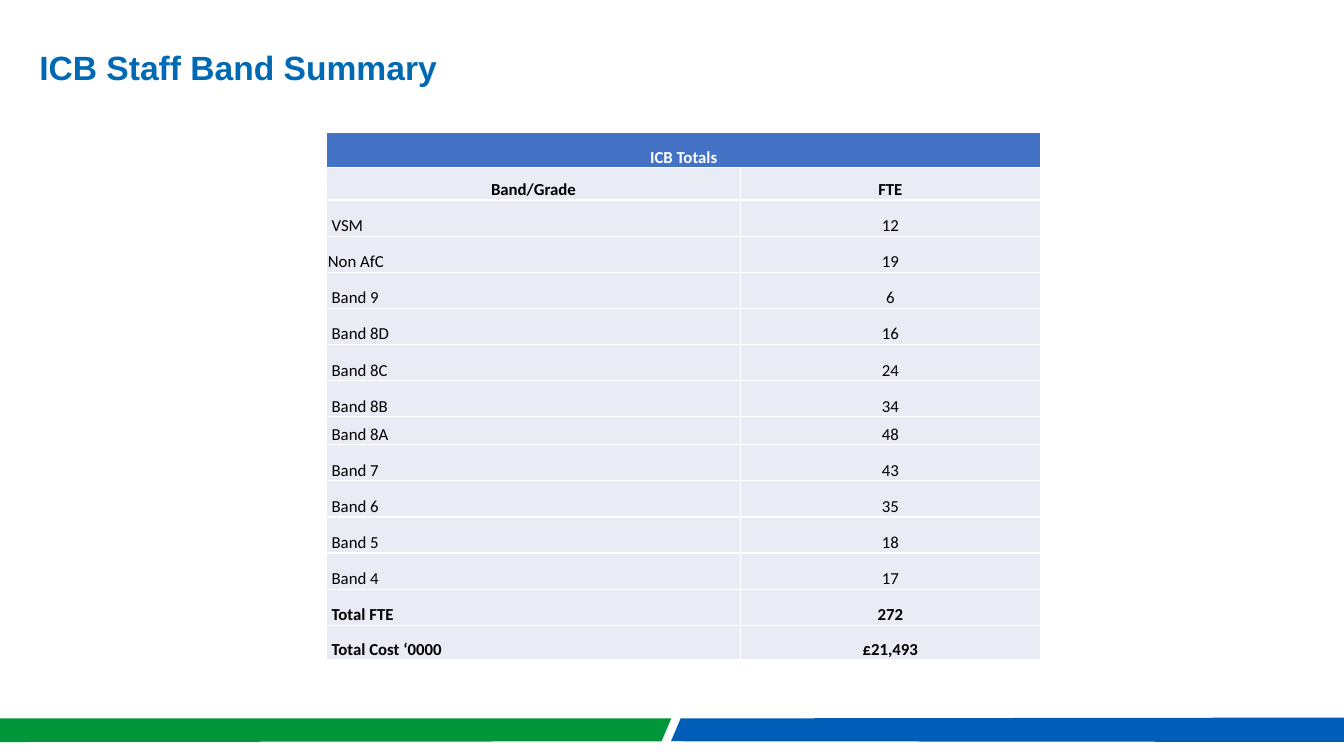
import pptx
import pptx.dml.color
import pptx.enum.text
import pptx.oxml
import pptx.oxml.ns
import pptx.util
from pptx.util import Pt

BAND_ROWS = [
    ("VSM", "12"), ("Non AfC", "19"), ("Band 9", "6"), ("Band 8D", "16"),
    ("Band 8C", "24"), ("Band 8B", "34"), ("Band 8A", "48"), ("Band 7", "43"),
    ("Band 6", "35"), ("Band 5", "18"), ("Band 4", "17"),
]
TOTAL_ROWS = [("Total FTE", "272"), ("Total Cost ‘0000", "£21,493")]
COLUMN_WIDTHS = [295.2, 214.6]
USUAL_HEIGHT = 25.8
SPECIAL_HEIGHTS = {"ICB Totals": 25.4, "Band/Grade": 23, "Band 8A": 20, "Total Cost ‘0000": 24.5}
CENTER = pptx.enum.text.PP_ALIGN.CENTER
LEFT = pptx.enum.text.PP_ALIGN.LEFT


def color(hex_value):
    return pptx.dml.color.RGBColor.from_string(hex_value)


def add_run(paragraph, text, size, font, hex_value, bold):
    run = paragraph.add_run()
    run.text = text
    run.font.size = Pt(size)
    run.font.name = font
    run.font.bold = bold
    run.font.color.rgb = color(hex_value)


def add_ribbon(slide, corners, hex_value):
    outline = slide.shapes.build_freeform(Pt(corners[0][0]), Pt(corners[0][1]))
    outline.add_line_segments([(Pt(x), Pt(y)) for x, y in corners[1:]], close=True)
    ribbon = outline.convert_to_shape()
    ribbon.shadow.inherit = False
    ribbon.fill.solid()
    ribbon.fill.fore_color.rgb = color(hex_value)
    ribbon.line.fill.background()


def add_title(slide, text):
    frame = slide.shapes.add_textbox(Pt(28.1), Pt(13.7), Pt(667.4), Pt(52.6)).text_frame
    frame.word_wrap = True
    frame.vertical_anchor = pptx.enum.text.MSO_ANCHOR.BOTTOM
    frame.margin_left = 0
    paragraph = frame.paragraphs[0]
    paragraph.line_spacing = 0.9
    add_run(paragraph, text, 24, "Arial", "0069B3", True)


def set_borders(cell):
    properties = cell._tc.get_or_add_tcPr()
    for position, side in enumerate(("lnL", "lnR", "lnT", "lnB")):
        border = pptx.oxml.parse_xml(
            f'<a:{side} {pptx.oxml.ns.nsdecls("a")} w="{Pt(1)}"><a:solidFill>'
            f'<a:srgbClr val="FFFFFF"/></a:solidFill></a:{side}>'
        )
        properties.insert(position, border)


def fill_cell(cell, text, align, bold, fill="E9EBF5", text_color="000000", indent=0.7):
    cell.fill.solid()
    cell.fill.fore_color.rgb = color(fill)
    set_borders(cell)
    cell.vertical_anchor = pptx.enum.text.MSO_ANCHOR.BOTTOM
    cell.margin_left = Pt(indent)
    cell.margin_right = cell.margin_top = Pt(0.7)
    cell.margin_bottom = 0
    paragraph = cell.text_frame.paragraphs[0]
    paragraph.alignment = align
    add_run(paragraph, text, 12, "Calibri", text_color, bold)


def add_band_table(slide):
    body = BAND_ROWS + TOTAL_ROWS
    labels = ["ICB Totals", "Band/Grade"] + [label for label, _ in body]
    heights = [SPECIAL_HEIGHTS.get(label, USUAL_HEIGHT) for label in labels]
    frame = slide.shapes.add_table(
        len(labels), 2, Pt(233.5), Pt(94.5), Pt(sum(COLUMN_WIDTHS)), Pt(sum(heights))
    )
    bands = frame.table
    for column, width in zip(bands.columns, COLUMN_WIDTHS):
        column.width = Pt(width)
    for row, height in zip(bands.rows, heights):
        row.height = Pt(height)

    bands.cell(0, 0).merge(bands.cell(0, 1))
    fill_cell(bands.cell(0, 0), "ICB Totals", CENTER, True, "4472C4", "FFFFFF")
    for column, heading in enumerate(("Band/Grade", "FTE")):
        fill_cell(bands.cell(1, column), heading, CENTER, True)
    for row, (label, value) in enumerate(body, start=2):
        bold = label.startswith("Total")
        indent = 0.7 if label == "Non AfC" else 3.4
        fill_cell(bands.cell(row, 0), label, LEFT, bold, indent=indent)
        fill_cell(bands.cell(row, 1), value, CENTER, bold)


def main():
    deck = pptx.Presentation()
    deck.slide_width, deck.slide_height = Pt(960), Pt(540)
    slide = deck.slides.add_slide(deck.slide_layouts[6])
    add_ribbon(slide, [(-1, 530), (-1.4, 513.2), (479.5, 513.2), (472.5, 529.5)], "009639")
    add_ribbon(slide, [(960, 512.6), (960, 530), (479.3, 529.5), (486.2, 513.2)], "005EB8")
    add_title(slide, "ICB Staff Band Summary")
    add_band_table(slide)
    deck.save("out.pptx")


if __name__ == "__main__":
    main()
